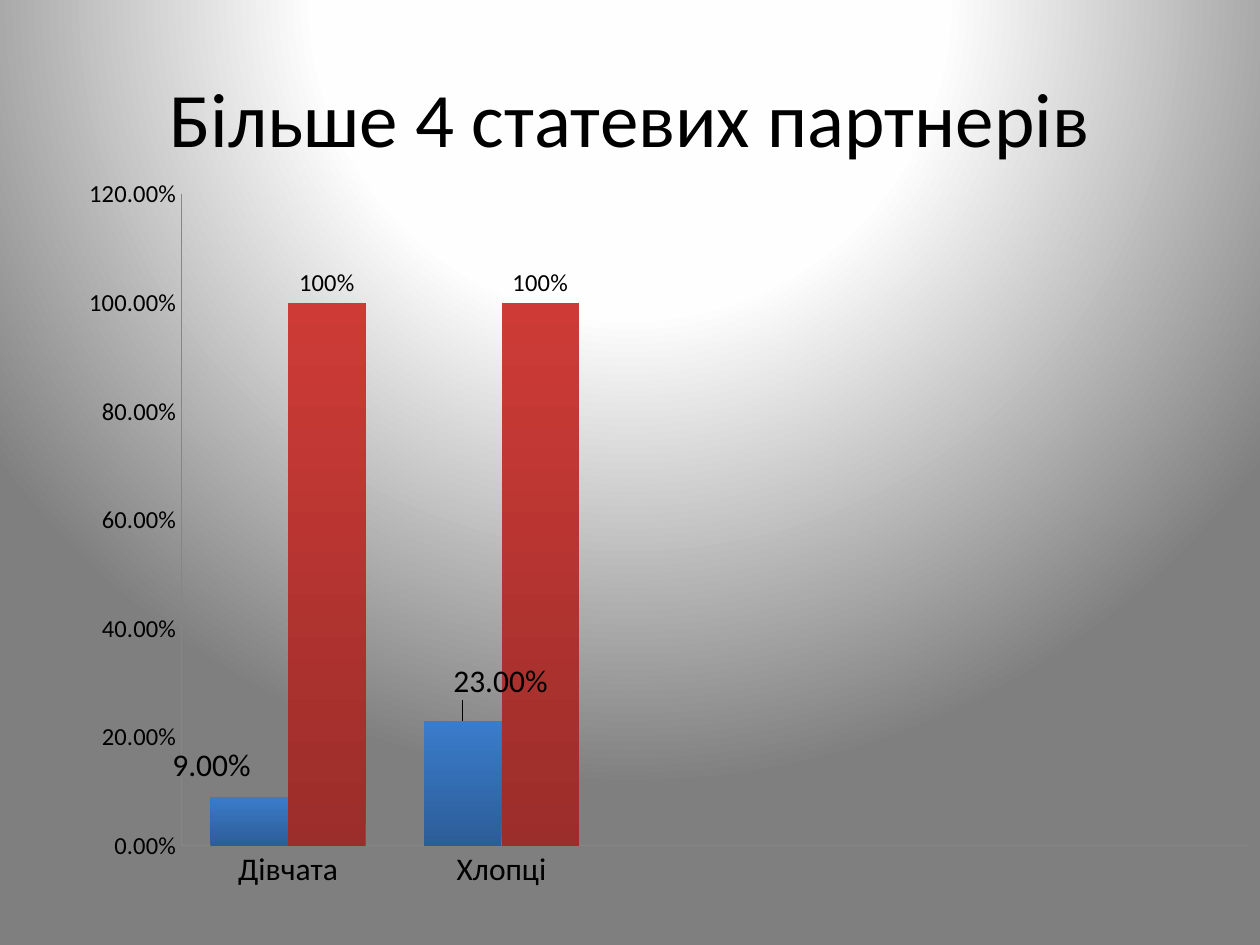
import pptx
import pptx.chart.data
import pptx.dml.color
import pptx.enum.chart
import pptx.enum.text
import pptx.oxml
import pptx.oxml.ns
import pptx.util
from pptx.util import Inches, Pt

NS = pptx.oxml.ns.nsdecls("a", "p", "c")


def rgb(value):
    return pptx.dml.color.RGBColor.from_string(value)


def layout_xml(x, y, w=None, h=None):
    """Chart layout: a label offset, or an inner plot area when w and h are given."""
    parts = []
    if w is not None:
        parts += [("layoutTarget", "inner"), ("xMode", "edge"), ("yMode", "edge")]
    parts += [("x", x), ("y", y)]
    if w is not None:
        parts += [("w", w), ("h", h)]
    body = "".join(f'<c:{tag} val="{val}"/>' for tag, val in parts)
    return pptx.oxml.parse_xml(
        f"<c:layout {NS}><c:manualLayout>{body}</c:manualLayout></c:layout>")


class Deck:
    font = "Calibri"
    text = "000000"
    axis = "868686"

    def __init__(self):
        self.prs = pptx.Presentation()
        self.prs.slide_width, self.prs.slide_height = Inches(10), Inches(7.5)
        self.slide = self.prs.slides.add_slide(self.prs.slide_layouts[5])

    def style(self, font, size):
        font.name, font.size = self.font, Pt(size)
        font.color.rgb = rgb(self.text)

    def background(self, stops):
        gs = "".join(f'<a:gs pos="{pos * 1000}"><a:srgbClr val="{color}"/></a:gs>'
                     for pos, color in stops)
        bg = pptx.oxml.parse_xml(
            f'<p:bg {NS}><p:bgPr><a:gradFill rotWithShape="1"><a:gsLst>{gs}</a:gsLst>'
            '<a:path path="circle"><a:fillToRect l="50000" t="-80000" r="50000" b="180000"/>'
            '</a:path></a:gradFill><a:effectLst/></p:bgPr></p:bg>')
        self.slide.element.cSld.insert(0, bg)

    def title(self, text, x, y, w, h, size):
        sp = self.slide.shapes.title
        sp.left, sp.top, sp.width, sp.height = map(Inches, (x, y, w, h))
        tf = sp.text_frame
        tf.text = text
        tf.vertical_anchor = pptx.enum.text.MSO_ANCHOR.MIDDLE
        p = tf.paragraphs[0]
        p.alignment = pptx.enum.text.PP_ALIGN.CENTER
        r = p.runs[0]
        self.style(r.font, size)
        r.font.bold = False
        r._r.get_or_add_rPr().insert(0, pptx.oxml.parse_xml(
            f'<a:ln {NS} w="9525"><a:solidFill><a:srgbClr val="002060"/></a:solidFill></a:ln>'))

    def column_chart(self, x, y, w, h, categories, series, plot_area):
        data = pptx.chart.data.CategoryChartData()
        data.categories = categories
        for s in series:
            data.add_series(s["name"], s["values"], s["format"])
        chart = self.slide.shapes.add_chart(
            pptx.enum.chart.XL_CHART_TYPE.COLUMN_CLUSTERED,
            *map(Inches, (x, y, w, h)), data).chart
        chart.has_legend = chart.has_title = False
        self.style(chart.font, 10)
        self.format_axis(chart.category_axis, 18)
        self.format_axis(chart.value_axis, 14)
        chart.value_axis.minimum_scale, chart.value_axis.maximum_scale = 0, 1.2
        chart.value_axis.major_unit = 0.2
        chart.value_axis.tick_labels.number_format = "0.00%"
        chart.value_axis.tick_labels.number_format_is_linked = False
        plot = chart.plots[0]
        plot.gap_width, plot.overlap, plot.vary_by_categories = 75, 0, False
        for s, drawn in zip(series, plot.series):
            self.format_series(drawn, s)
        area = chart._chartSpace.chart.plotArea
        for old in area.findall(pptx.oxml.ns.qn("c:layout")):
            area.remove(old)
        area.insert(0, layout_xml(*plot_area))

    def format_axis(self, axis, size):
        none = pptx.enum.chart.XL_TICK_MARK.NONE
        axis.major_tick_mark = axis.minor_tick_mark = none
        axis.has_major_gridlines = False
        axis.format.line.color.rgb = rgb(self.axis)
        axis.format.line.width = Pt(0.75)
        self.style(axis.tick_labels.font, size)

    def format_series(self, drawn, s):
        outside = pptx.enum.chart.XL_LABEL_POSITION.OUTSIDE_END
        fill = drawn.format.fill
        fill.gradient()
        fill.gradient_angle = 90
        for stop, color in zip(fill.gradient_stops, s["colors"]):
            stop.color.rgb = rgb(color)
        labels = drawn.data_labels
        labels.show_value, labels.position = True, outside
        labels.number_format, labels.number_format_is_linked = s["format"], False
        self.style(labels.font, s["size"])
        for i, offset in enumerate(s.get("offsets", [])):
            label = drawn.points[i].data_label
            label.position = outside
            self.style(label.font, s["size"])
            dLbl = drawn._element.xpath(f"c:dLbls/c:dLbl[c:idx/@val='{i}']")[0]
            dLbl.insert(1, layout_xml(*offset))


def main():
    deck = Deck()
    deck.background([(0, "FFFFFF"), (40, "FEFEFE"), (100, "7F7F7F")])
    deck.title("Більше 4 статевих партнерів", 0.5, 0.3, 9, 1.25, 44)
    blank = [None] * 3
    deck.column_chart(
        0, 1.25, 10, 6.25,
        ["Дівчата", "Хлопці", "", "", ""],
        [{"name": "Series 1", "values": [0.09, 0.23] + blank, "format": "0.00%",
          "colors": ("2C5D98", "3A7CCB"), "size": 18,
          "offsets": [(-0.03, -0.01), (0.03, -0.02)]},
         {"name": "Series 2", "values": [1, 1] + blank, "format": "0%",
          "colors": ("9B2D2A", "CE3B37"), "size": 14}],
        (0.144, 0.047, 0.847, 0.827))
    deck.prs.save("out.pptx")


if __name__ == "__main__":
    main()
